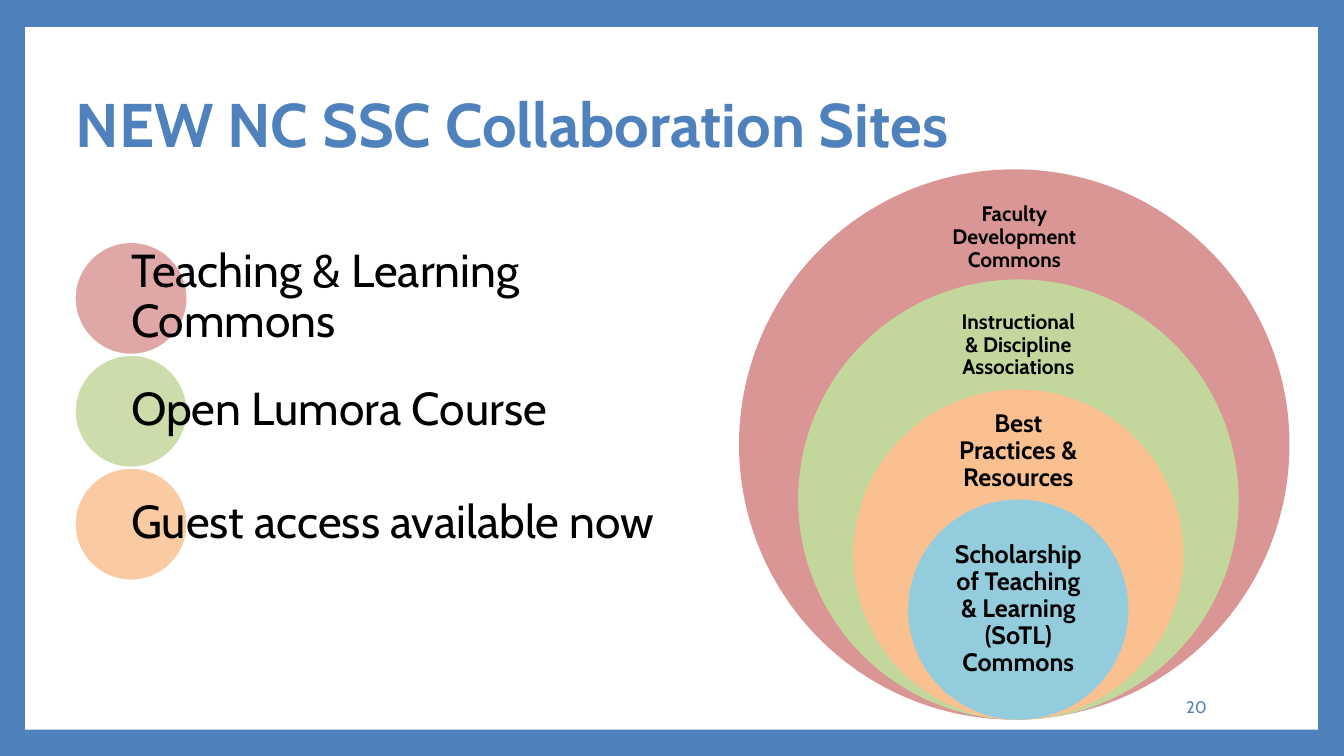
from lxml.etree import SubElement
from pptx import Presentation
from pptx.dml.color import RGBColor
from pptx.enum.shapes import MSO_SHAPE
from pptx.enum.text import MSO_ANCHOR, MSO_AUTO_SIZE, PP_ALIGN
from pptx.oxml.ns import qn
from pptx.util import Inches, Pt

COLORS = {
    "frame": "4F81BD", "panel": "FFFFFF", "text": "000000",
    "rose": "D99694", "sage": "C3D69B", "peach": "FAC090", "sky": "93CDDD",
    "red": "C0504D", "green": "9BBB59", "orange": "F79646",
}
FONT = "Cabin"
TITLE = "NEW NC SSC Collaboration Sites"
PAGE_NUMBER = "20"
SITES = [
    ("Teaching & Learning Commons", "red", 2),
    ("Open Lumora Course", "green", 1),
    ("Guest access available now", "orange", 1),
]
RINGS = [
    ("Faculty Development Commons", "rose", 10.06, 1.95, 0.82, 15),
    ("Instructional & Discipline Associations", "sage", 10.1, 3.03, 0.79, 15),
    ("Best Practices & Resources", "peach", 10.1, 4.11, 0.74, 18),
    ("Scholarship of Teaching & Learning (SoTL) Commons", "sky", 10.1, 5.5, 1.09, 18),
]
RING_BOTTOM, RING_DIAMETER = 7.14, 5.46
LABEL_WIDTH = 1.54
DOT_LEFT, DOT_TOP, DOT_SIZE = 0.74, 2.4, 1.12
SITE_LINE = 0.5


def color(name):
    return RGBColor.from_string(COLORS[name])


def place(shape, left, top, width, height):
    shape.left, shape.top = Inches(left), Inches(top)
    shape.width, shape.height = Inches(width), Inches(height)


def write(shape, *lines, size, ink="text", bold=False, align=PP_ALIGN.LEFT,
          anchor=MSO_ANCHOR.MIDDLE, inset=(0.1, 0.05), spacing=0.9):
    frame = shape.text_frame
    frame.word_wrap = True
    frame.auto_size = MSO_AUTO_SIZE.NONE
    frame.vertical_anchor = anchor
    frame.margin_left = frame.margin_right = Inches(inset[0])
    frame.margin_top = frame.margin_bottom = Inches(inset[1])
    frame.text = "\n".join(lines)
    for paragraph in frame.paragraphs:
        paragraph.alignment = align
        paragraph.line_spacing = spacing
        paragraph.space_before = Pt(0)
        font = paragraph.runs[0].font
        font.name, font.size, font.bold = FONT, Pt(size), bold
        font.color.rgb = color(ink)
    return frame


def add_solid(slide, kind, left, top, width, height, fill, alpha=None):
    shape = slide.shapes.add_shape(
        kind, Inches(left), Inches(top), Inches(width), Inches(height))
    shape.shadow.inherit = False
    shape.fill.solid()
    shape.fill.fore_color.rgb = color(fill)
    shape.line.fill.background()
    if alpha is not None:
        tint = shape.fill._xPr.find(qn("a:solidFill"))[0]
        SubElement(tint, qn("a:alpha")).set("val", str(alpha * 1000))
    return shape


def add_text(slide, text, left, top, width, height, **style):
    box = slide.shapes.add_textbox(
        Inches(left), Inches(top), Inches(width), Inches(height))
    write(box, text, **style)


def add_sites(slide):
    for row, (site, fill, lines) in enumerate(SITES):
        dot = add_solid(slide, MSO_SHAPE.OVAL, DOT_LEFT, DOT_TOP + row * DOT_SIZE,
                        DOT_SIZE, DOT_SIZE, fill, alpha=50)
        dot.line.color.rgb = color("panel")
        dot.line.width = Pt(1.5)

    body = slide.placeholders[1]
    first_gap = (DOT_SIZE - SITES[0][2] * SITE_LINE) / 2
    place(body, DOT_LEFT + DOT_SIZE / 2, DOT_TOP + first_gap,
          5.9, len(SITES) * DOT_SIZE - first_gap)
    frame = write(body, *[site for site, _, _ in SITES], size=33,
                  anchor=MSO_ANCHOR.TOP, inset=(0, 0))
    for row, paragraph in enumerate(frame.paragraphs):
        properties = paragraph._p.get_or_add_pPr()
        properties.set("marL", "0")
        properties.set("indent", "0")
        SubElement(properties, qn("a:buNone"))
        if row:
            lines = SITES[row - 1][2] + SITES[row][2]
            paragraph.space_before = Pt(round(72 * (DOT_SIZE - lines * SITE_LINE / 2)))
    slide.shapes._spTree.append(body._element)


def add_rings(slide):
    for step, (label, fill, center, top, height, size) in enumerate(RINGS):
        diameter = RING_DIAMETER * (1 - 0.2 * step)
        add_solid(slide, MSO_SHAPE.OVAL, center - diameter / 2,
                  RING_BOTTOM - diameter, diameter, diameter, fill)
        add_text(slide, label, center - LABEL_WIDTH / 2, top, LABEL_WIDTH, height,
                 size=size, bold=True, align=PP_ALIGN.CENTER, inset=(0.12, 0.12))


def main():
    deck = Presentation()
    deck.slide_width, deck.slide_height = Inches(13.33), Inches(7.5)
    slide = deck.slides.add_slide(deck.slide_layouts[1])
    slide.background.fill.solid()
    slide.background.fill.fore_color.rgb = color("frame")

    panel = add_solid(slide, MSO_SHAPE.RECTANGLE, 0.25, 0.27, 12.82, 6.97, "panel")
    slide.shapes._spTree.insert(2, panel._element)

    title = slide.shapes.title
    place(title, 0.65, 0.53, 10.8, 1.48)
    write(title, TITLE, size=44, ink="frame", bold=True)
    add_text(slide, PAGE_NUMBER, 10.2, 6.81, 1.87, 0.4, size=12, ink="frame",
             align=PP_ALIGN.RIGHT, spacing=1.0)
    add_rings(slide)
    add_sites(slide)
    deck.save("out.pptx")


if __name__ == "__main__":
    main()
